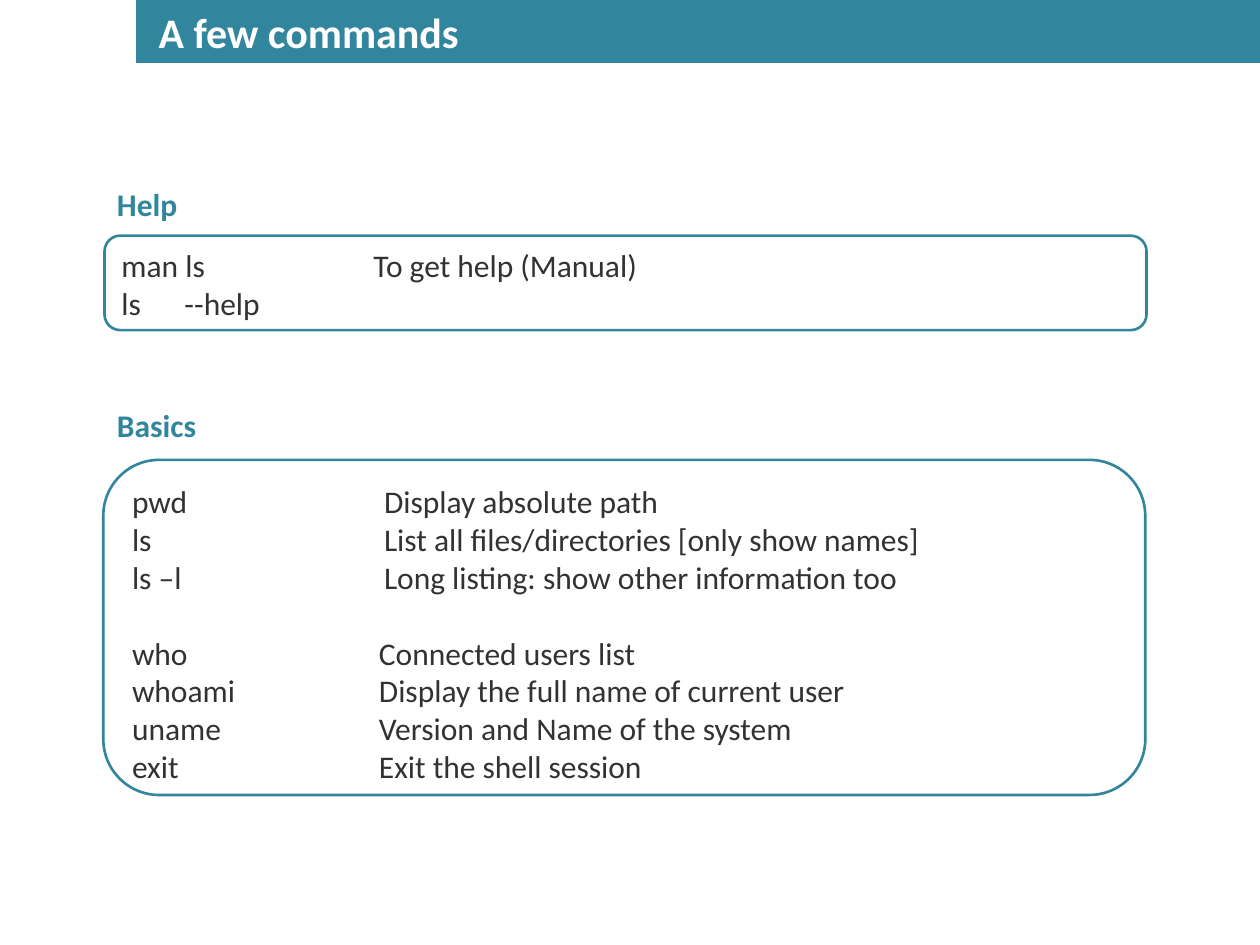
from lxml.etree import SubElement
from pptx import Presentation
from pptx.dml.color import RGBColor
from pptx.enum.shapes import MSO_SHAPE as Shape
from pptx.enum.text import MSO_ANCHOR as Anchor, PP_ALIGN as Align
from pptx.oxml.ns import qn
from pptx.util import Inches, Pt

# Content
TITLE = "A few commands"
# Each group of lines shares its tab stops; a gap separates groups
SECTIONS = [
    dict(heading="Help", heading_top=1.42, box=(0.83, 1.87, 8.27, 0.75), groups=[
        ((0.5, 2), ["man ls\tTo get help (Manual)", "ls\t--help"]),
    ]),
    dict(heading="Basics", heading_top=3.17, box=(0.82, 3.65, 8.27, 2.66), groups=[
        ((2,), ["pwd\tDisplay absolute path",
                "ls\tList all files/directories [only show names]",
                "ls –l\tLong listing: show other information too"]),
        ((1.96,), ["who\tConnected users list",
                   "whoami\tDisplay the full name of current user",
                   "uname\tVersion and Name of the system",
                   "exit\tExit the shell session"]),
    ]),
]


class Theme:
    font = "Calibri"
    teal = RGBColor.from_string("31859C")
    ink = RGBColor.from_string("323232")
    white = RGBColor.from_string("FFFFFF")
    title_size, body_size = 24, 18
    group_gap = 21.6  # one body line, in points
    outline = 1.5


def write(paragraph, text, size=Theme.body_size, color=Theme.ink, bold=False,
          align=Align.LEFT, tabs=(), before=0):
    paragraph.alignment = align
    if before:
        paragraph.space_before = Pt(before)
    if tabs:
        stops = SubElement(paragraph._p.get_or_add_pPr(), qn("a:tabLst"))
        for stop in tabs:
            SubElement(stops, qn("a:tab"), pos=str(Inches(stop)), algn="l")
    paragraph.text = text
    for run in paragraph.runs:
        font = run.font
        font.name, font.size, font.bold = Theme.font, Pt(size), bold
        font.color.rgb = color


def add_panel(slide, kind, box, anchor):
    panel = slide.shapes.add_shape(kind, *map(Inches, box))
    panel.shadow.inherit = False
    panel.text_frame.word_wrap = True
    panel.text_frame.vertical_anchor = anchor
    return panel


def add_section(slide, heading, heading_top, box, groups):
    # Heading
    label = slide.shapes.add_textbox(*map(Inches, (0.83, heading_top, 8.52, 0.4)))
    label.text_frame.word_wrap = True
    write(label.text_frame.paragraphs[0], heading, color=Theme.teal, bold=True)

    # Outlined command list
    panel = add_panel(slide, Shape.ROUNDED_RECTANGLE, box, Anchor.TOP)
    panel.fill.background()
    panel.line.color.rgb = Theme.teal
    panel.line.width = Pt(Theme.outline)
    frame = panel.text_frame
    for g, (tabs, commands) in enumerate(groups):
        for c, command in enumerate(commands):
            first = g == c == 0
            write(frame.paragraphs[0] if first else frame.add_paragraph(), command,
                  align=Align.JUSTIFY, tabs=tabs,
                  before=Theme.group_gap if g and c == 0 else 0)


def main():
    deck = Presentation()
    deck.slide_width, deck.slide_height = Inches(10), Inches(7.5)
    slide = deck.slides.add_slide(deck.slide_layouts[6])

    for section in SECTIONS:
        add_section(slide, **section)

    # Title band
    band = add_panel(slide, Shape.RECTANGLE, (1.08, 0, 8.92, 0.5), Anchor.MIDDLE)
    band.fill.solid()
    band.fill.fore_color.rgb = Theme.teal
    band.line.fill.background()
    band.text_frame.margin_left = Inches(0.18)
    write(band.text_frame.paragraphs[0], TITLE, size=Theme.title_size,
          color=Theme.white, bold=True)

    deck.save("out.pptx")


if __name__ == "__main__":
    main()
